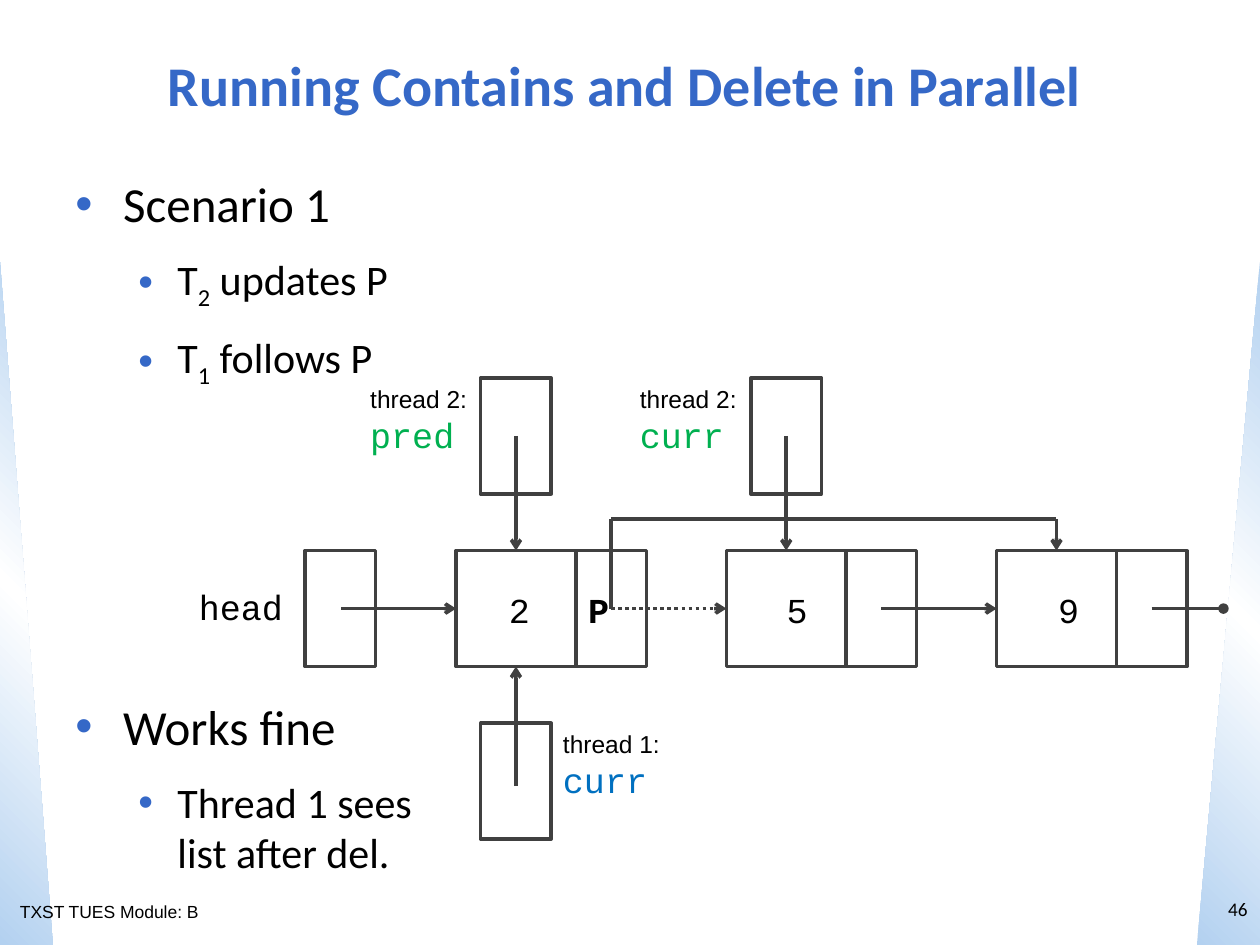
import pptx
import pptx.dml.color
import pptx.enum.dml
import pptx.enum.shapes
import pptx.enum.text
import pptx.oxml
import pptx.oxml.ns
import pptx.util
from pptx.util import Inches

SHAPE = pptx.enum.shapes.MSO_SHAPE
ALIGN = pptx.enum.text.PP_ALIGN
MIDDLE = pptx.enum.text.MSO_ANCHOR.MIDDLE
NS = pptx.oxml.ns.nsdecls("a")
TOP, LEFT, BOTTOM = 0, 1, 2  # connection sites of a rectangle

BLUE, BLACK, GREY = "3568C7", "000000", "404040"
GREEN, THREAD_BLUE = "00B050", "0070C0"
SANS, BODY, CODE = "Arial", "Calibri", "Courier New"


def color(hex_code):
    return pptx.dml.color.RGBColor.from_string(hex_code)


def xml(markup):
    return pptx.oxml.parse_xml(markup)


class SlideBuilder:
    def __init__(self, slide):
        self.slide = slide

    def style(self, run, size, font, hex_code=BLACK, bold=False):
        run.font.size = pptx.util.Pt(size)
        run.font.name = font
        run.font.bold = bold
        run.font.color.rgb = color(hex_code)

    def text(self, x, y, w, h, lines, align=ALIGN.LEFT, anchor=None, wrap=False):
        """Each line is (wording, size, font, colour, bold), the last two optional."""
        frame = self.slide.shapes.add_textbox(
            Inches(x), Inches(y), Inches(w), Inches(h)).text_frame
        frame.word_wrap = wrap
        if anchor is not None:
            frame.vertical_anchor = anchor
        frame.text = "\n".join(line[0] for line in lines)
        for paragraph, line in zip(frame.paragraphs, lines):
            paragraph.alignment = align
            self.style(paragraph.runs[0], *line[1:])

    def bullets(self, x, y, w, h, items):
        """Each item is (level, pieces); every second piece is a subscript."""
        frame = self.slide.shapes.add_textbox(
            Inches(x), Inches(y), Inches(w), Inches(h)).text_frame
        frame.word_wrap = True
        for index, (level, pieces) in enumerate(items):
            paragraph = frame.add_paragraph() if index else frame.paragraphs[0]
            paragraph.level = level
            if index:
                paragraph.space_before = pptx.util.Pt(12)
            indent, hang = [(0.38, 0.38), (0.81, 0.31)][level]
            props = paragraph._p.get_or_add_pPr()
            props.set("marL", str(Inches(indent)))
            props.set("indent", str(-Inches(hang)))
            props.append(xml(f'<a:buClr {NS}><a:srgbClr val="{BLUE}"/></a:buClr>'))
            props.append(xml(f'<a:buFont {NS} typeface="Arial"/>'))
            props.append(xml(f'<a:buChar {NS} char="•"/>'))
            if len(pieces) == 1:
                paragraph.text = pieces[0]
            else:
                for piece in pieces:
                    paragraph.add_run().text = piece
            for position, run in enumerate(paragraph.runs):
                self.style(run, 24 if level else 28, BODY)
                if position % 2 and len(pieces) > 1:
                    run._r.get_or_add_rPr().set("baseline", "-25000")

    def cell(self, x, y, w=0.56, h=0.92):
        shape = self.slide.shapes.add_shape(
            SHAPE.RECTANGLE, Inches(x), Inches(y), Inches(w), Inches(h))
        shape.shadow.inherit = False
        shape.fill.background()
        shape.line.color.rgb = color(GREY)
        shape.line.width = pptx.util.Pt(2)
        return shape

    def line(self, start, end, target=None, site=None, tip=None, dotted=False):
        link = self.slide.shapes.add_connector(
            pptx.enum.shapes.MSO_CONNECTOR.STRAIGHT,
            *(Inches(value) for value in (*start, *end)))
        if target is not None:
            link.end_connect(target, site)
        link.line.color.rgb = color(GREY)
        link.line.width = pptx.util.Pt(2)
        if dotted:
            link.line.dash_style = pptx.enum.dml.MSO_LINE.ROUND_DOT
        if tip:
            link.line._get_or_add_ln().append(xml(f'<a:tailEnd {NS} type="{tip}"/>'))
        link._element.spPr.append(xml(f"<a:effectLst {NS}/>"))

    def side_wedge(self, x, w, angle, flipped=False):
        shape = self.slide.shapes.add_shape(
            SHAPE.RIGHT_TRIANGLE, Inches(x), Inches(2.08), Inches(w), Inches(5.42))
        shape.shadow.inherit = False
        shape.line.fill.background()
        if flipped:
            shape._element.spPr.get_or_add_xfrm().set("flipH", "1")
        stops = "".join(
            f'<a:gs pos="{pos}000"><a:srgbClr val="{shade}"/></a:gs>'
            for pos, shade in ((0, "B3D1F0"), (50, "FFFFFF"), (100, "B3D1F0")))
        shape._element.spPr.find(pptx.oxml.ns.qn("a:prstGeom")).addnext(xml(
            f'<a:gradFill {NS} rotWithShape="1"><a:gsLst>{stops}</a:gsLst>'
            f'<a:lin ang="{angle * 60000}" scaled="0"/></a:gradFill>'))


def main():
    deck = pptx.Presentation()
    deck.slide_width, deck.slide_height = Inches(10), Inches(7.5)
    page = SlideBuilder(deck.slides.add_slide(deck.slide_layouts[6]))

    # Side decoration, footer and page number
    page.side_wedge(0, 0.42, 315)
    page.side_wedge(9.5, 0.5, 45, flipped=True)
    page.text(0.06, 7.1, 1.75, 0.27, [("TXST TUES Module: B", 10, SANS)])
    page.text(9.5, 6.92, 0.5, 0.58, [("46", 11, BODY)], ALIGN.RIGHT, MIDDLE, True)

    # Title and bullets above and below the diagram
    page.text(0.25, 0.25, 9.42, 0.83,
              [("Running Contains and Delete in Parallel", 32, BODY, BLUE, True)],
              ALIGN.CENTER, MIDDLE, True)
    page.bullets(0.5, 1.33, 9.17, 1.9, [
        (0, ["Scenario 1"]),
        (1, ["T", "2", " updates P"]),
        (1, ["T", "1", " follows P"])])
    page.bullets(0.5, 5.48, 3.3, 1.5, [
        (0, ["Works fine"]),
        (1, ["Thread 1 sees\vlist after del."])])

    # Linked list: a value cell and a pointer cell per node
    row, middle, first, pitch = 4.37, 4.83, 3.62, 2.145
    value_width, half_pointer = 0.95, 0.28
    page.text(1.48, 4.6, 0.88, 0.44, [("head", 20, CODE)])
    page.cell(2.42, row)
    values, pointers, centers = [], [], []
    for index, (value, inset) in enumerate((("2", 0.32), ("5", 0.38), ("9", 0.39))):
        left = first + index * pitch
        values.append(page.cell(left, row, value_width))
        page.cell(left + value_width, row)
        pointers.append(left + value_width + half_pointer)
        centers.append(left + value_width / 2)
        page.text(left + inset, 4.62, 0.37, 0.44, [(value, 20, CODE)])
    page.text(4.57, 4.62, 0.37, 0.44, [("P", 20, CODE, BLACK, True)])

    # Pointers along the list; the old link from node 2 is dotted
    starts = [2.71, *pointers[:2]]
    for index, start in enumerate(starts):
        page.line((start, middle), (first + index * pitch, middle),
                  values[index], LEFT, "arrow", dotted=index == 1)
    page.line((pointers[2], middle), (9.71, middle), tip="oval")

    # New link that skips node 5
    bypass = 4.12
    page.line((pointers[0], bypass), (pointers[0], middle))
    page.line((pointers[0], bypass), (centers[2], bypass))
    page.line((centers[2], bypass), (centers[2], row), values[2], TOP, "arrow")

    # Thread variables: node, top, label left, label, colour, start, site
    for node, top, label_x, thread, name, shade, start, site in (
            (0, 3, 2.84, "thread 2:", "pred", GREEN, 3.46, TOP),
            (1, 3, 4.98, "thread 2:", "curr", GREEN, 3.46, TOP),
            (0, 5.74, 4.37, "thread 1:", "curr", THREAD_BLUE, 6.24, BOTTOM)):
        center = centers[node]
        page.cell(center - half_pointer, top)
        page.text(label_x, top, 0.97, 0.67,
                  [(thread, 14, SANS), (name, 20, CODE, shade)])
        page.line((center, start), (center, row), values[node], site, "arrow")

    deck.save("out.pptx")


if __name__ == "__main__":
    main()
